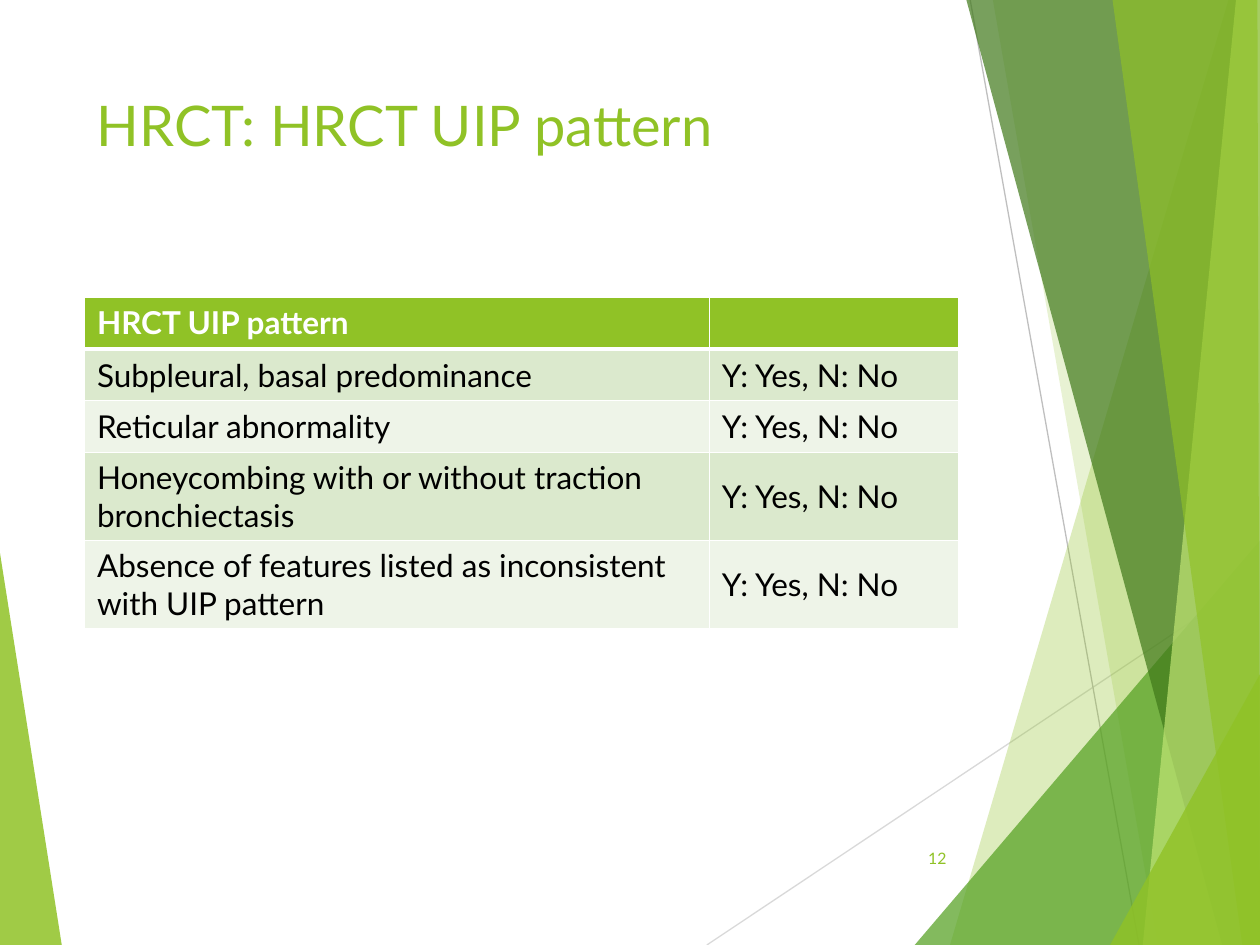
from lxml import etree
from pptx import Presentation
from pptx.dml.color import RGBColor
from pptx.enum.shapes import MSO_CONNECTOR
from pptx.enum.text import MSO_ANCHOR, PP_ALIGN
from pptx.oxml.ns import qn
from pptx.util import Pt

SCALE = 9144  # EMU per px, 100 px to the inch
WIDTH, HEIGHT = 1000, 750
STRAIGHT = MSO_CONNECTOR.STRAIGHT
TOP, MIDDLE = MSO_ANCHOR.TOP, MSO_ANCHOR.MIDDLE
LEFT, RIGHT = PP_ALIGN.LEFT, PP_ALIGN.RIGHT

COLORS = {
    "accent": "90C226", "green": "54A021", "dark": "3F7819", "lime": "C0E474",
    "line_light": "D9D9D9", "line_mid": "BFBFBF",
    "band_dark": "DBE9CD", "band_light": "EEF4E8",
    "white": "FFFFFF", "black": "000000",
}

LINES = [
    ((561, 750), (1000, 457), "line_light"),
    ((770, 0), (904, 750), "line_mid"),
]
# Outline, colour, opacity in percent; from back to front
LEFT_WEDGE = ([(0, 439), (49, 750), (0, 750)], "accent", 85)
RIGHT_FACETS = [
    ([(975, 0), (754, 750), (1000, 750), (1000, 0)], "accent", 30),
    ([(788, 0), (919, 750), (1000, 750), (1000, 0)], "accent", 20),
    ([(726, 750), (1000, 429), (1000, 750)], "green", 72),
    ([(767, 0), (970, 750), (1000, 750), (1000, 0)], "dark", 70),
    ([(981, 0), (907, 750), (1000, 750), (1000, 0)], "lime", 70),
    ([(883, 0), (986, 750), (1000, 750), (998, 0)], "accent", 65),
    ([(881, 750), (1000, 535), (1000, 750)], "accent", 80),
]

ANSWER = "Y: Yes, N: No"
CRITERIA = [
    "Subpleural, basal predominance",
    "Reticular abnormality",
    "Honeycombing with or without traction bronchiectasis",
    "Absence of features listed as inconsistent with UIP pattern",
]
ROWS = [("HRCT UIP pattern", "")] + [(text, ANSWER) for text in CRITERIA]
COL_WIDTHS = [496, 198]
ROW_HEIGHTS = [41, 41, 41, 70, 70]


def px(n):
    return n * SCALE


def rgb(name):
    return RGBColor.from_string(COLORS[name])


class SlideBuilder:
    font = "Lato"

    def __init__(self, slide):
        self.slide = slide
        self.shapes = slide.shapes

    def background(self, color):
        fill = self.slide.background.fill
        fill.solid()
        fill.fore_color.rgb = rgb(color)

    def facet(self, points, color, opacity):
        """Draw a translucent polygon without an outline."""
        builder = self.shapes.build_freeform(*points[0], scale=SCALE)
        builder.add_line_segments(points[1:], close=True)
        sp = builder.convert_to_shape()
        sp.shadow.inherit = False
        sp.line.fill.background()
        sp.fill.solid()
        sp.fill.fore_color.rgb = rgb(color)
        clr = sp._element.spPr.find(qn("a:solidFill"))[0]
        etree.SubElement(clr, qn("a:alpha")).set("val", str(opacity * 1000))

    def line(self, start, end, color):
        cxn = self.shapes.add_connector(STRAIGHT, *map(px, start + end))
        cxn.line.color.rgb = rgb(color)
        cxn.line.width = Pt(0.75)
        etree.SubElement(cxn._element.spPr, qn("a:effectLst"))

    def add_run(self, tf, text, size, color, bold=False, align=LEFT):
        p = tf.paragraphs[0]
        p.alignment = align
        r = p.add_run()
        r.text = text
        r.font.name = self.font
        r.font.size = Pt(size)
        r.font.bold = bold
        r.font.color.rgb = rgb(color)

    def text(self, box, text, size, color, anchor=TOP, align=LEFT):
        tf = self.shapes.add_textbox(*map(px, box)).text_frame
        tf.word_wrap = True
        tf.vertical_anchor = anchor
        self.add_run(tf, text, size, color, align=align)

    def border(self, cell, side, width):
        ln = etree.SubElement(cell._tc.get_or_add_tcPr(), qn(f"a:ln{side}"))
        ln.set("w", str(Pt(width)))
        fill = etree.SubElement(ln, qn("a:solidFill"))
        etree.SubElement(fill, qn("a:srgbClr")).set("val", COLORS["white"])

    def table(self, left, top, rows, col_widths, row_heights):
        """Add a table with a header row, banded rows and white rules."""
        frame = self.shapes.add_table(
            len(rows), len(col_widths), px(left), px(top),
            px(sum(col_widths)), px(sum(row_heights)))
        table = frame.table
        for column, width in zip(table.columns, col_widths):
            column.width = px(width)
        for i, (texts, height) in enumerate(zip(rows, row_heights)):
            table.rows[i].height = px(height)
            header = i == 0
            band = "band_dark" if i % 2 else "band_light"
            for j, text in enumerate(texts):
                cell = table.cell(i, j)
                widths = {"L": 1, "R": 1, "T": 3 if i == 1 else 1,
                          "B": 3 if header else 1}
                for side, width in widths.items():
                    self.border(cell, side, width)
                cell.fill.solid()
                cell.fill.fore_color.rgb = rgb("accent" if header else band)
                cell.vertical_anchor = TOP if header else MIDDLE
                if text:
                    self.add_run(cell.text_frame, text, 18,
                                 "white" if header else "black", bold=header)


def main():
    prs = Presentation()
    prs.slide_width, prs.slide_height = px(WIDTH), px(HEIGHT)
    s = SlideBuilder(prs.slides.add_slide(prs.slide_layouts[6]))
    s.background("white")
    s.facet(*LEFT_WEDGE)
    for line in LINES:
        s.line(*line)
    for facet in RIGHT_FACETS:
        s.facet(*facet)
    s.text((67, 67, 694, 144), "HRCT: HRCT UIP pattern", 32, "accent")
    s.table(67, 236, ROWS, COL_WIDTHS, ROW_HEIGHTS)
    s.text((705, 661, 56, 40), "12", 9, "accent", MIDDLE, RIGHT)
    prs.save("out.pptx")


if __name__ == "__main__":
    main()
